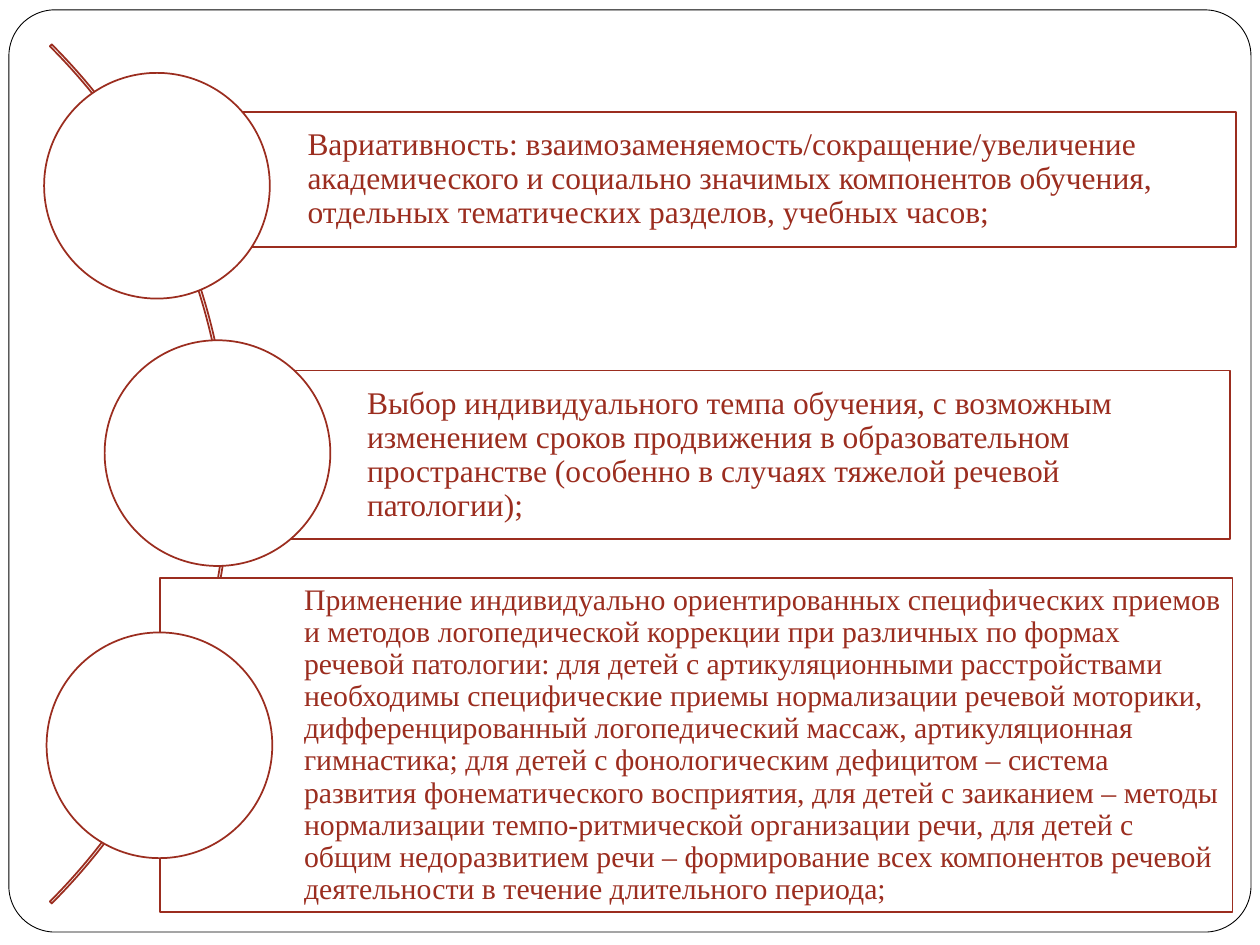
from pptx import Presentation
from pptx.dml.color import RGBColor
from pptx.enum.shapes import MSO_SHAPE as SHAPE
from pptx.enum.text import MSO_ANCHOR as ANCHOR, PP_ALIGN as ALIGN
from pptx.util import Cm, Pt

RED, WHITE, BLACK = "9B2D1F", "FFFFFF", "000000"
DIAMETER = 4.55


def rgb(value):
    return RGBColor.from_string(value)


def add_outline(kind, x, y, w, h, color=RED, weight=1):
    sp = s.shapes.add_shape(kind, Cm(x), Cm(y), Cm(w), Cm(h))
    sp.shadow.inherit = False
    sp.fill.solid()
    sp.fill.fore_color.rgb = rgb(WHITE)
    sp.line.color.rgb = rgb(color)
    sp.line.width = Pt(weight)
    return sp


prs = Presentation()
prs.slide_width, prs.slide_height = Cm(25.4), Cm(19.05)
s = prs.slides.add_slide(prs.slide_layouts[6])

# Rounded slide frame
frame = add_outline(SHAPE.ROUNDED_RECTANGLE, 0.18, 0.2, 25.04, 18.59, BLACK, 0.5)
frame.adjustments[0] = 0.05

# Thin arc behind the circles, from 315 to 45 degrees
arc = add_outline(SHAPE.BLOCK_ARC, -19.86, -2.69, 24.49, 24.49)
for i, value in enumerate((189, 27, 0.0022)):
    arc.adjustments[i] = value

# Box, circle position, font size and text of each principle
principles = [
    ((3.3, 2.26, 21.62, 2.72), (0.89, 1.47), 18,
     "Вариативность: взаимозаменяемость/сокращение/увеличение академического "
     "и социально значимых компонентов обучения, отдельных тематических "
     "разделов, учебных часов;"),
    ((4.5, 7.47, 20.29, 3.4), (2.11, 6.86), 18,
     "Выбор индивидуального темпа обучения, с возможным изменением сроков "
     "продвижения в образовательном пространстве (особенно в случаях тяжелой "
     "речевой патологии);"),
    ((3.23, 11.66, 21.62, 6.73), (0.94, 12.75), 17,
     "Применение индивидуально ориентированных специфических приемов и методов "
     "логопедической коррекции при различных по формах речевой патологии: для "
     "детей с артикуляционными расстройствами необходимы специфические приемы "
     "нормализации речевой моторики, дифференцированный логопедический массаж, "
     "артикуляционная гимнастика; для детей с фонологическим дефицитом – система "
     "развития фонематического восприятия, для детей с заиканием – методы "
     "нормализации темпо-ритмической организации речи, для детей с общим "
     "недоразвитием речи – формирование всех компонентов речевой деятельности "
     "в течение длительного периода;"),
]

for box, (cx, cy), size, text in principles:
    sp = add_outline(SHAPE.RECTANGLE, *box)
    tf = sp.text_frame
    tf.text = text
    tf.word_wrap = True
    tf.vertical_anchor = ANCHOR.MIDDLE
    tf.margin_left = Cm(2.9)
    tf.margin_top = tf.margin_right = tf.margin_bottom = Cm(0.13)
    p = tf.paragraphs[0]
    p.alignment = ALIGN.LEFT
    p.line_spacing = 0.9
    r = p.runs[0]
    r.font.name = "Times New Roman"
    r.font.size = Pt(size)
    r.font.color.rgb = rgb(RED)

    add_outline(SHAPE.OVAL, cx, cy, DIAMETER, DIAMETER)

prs.save("out.pptx")
